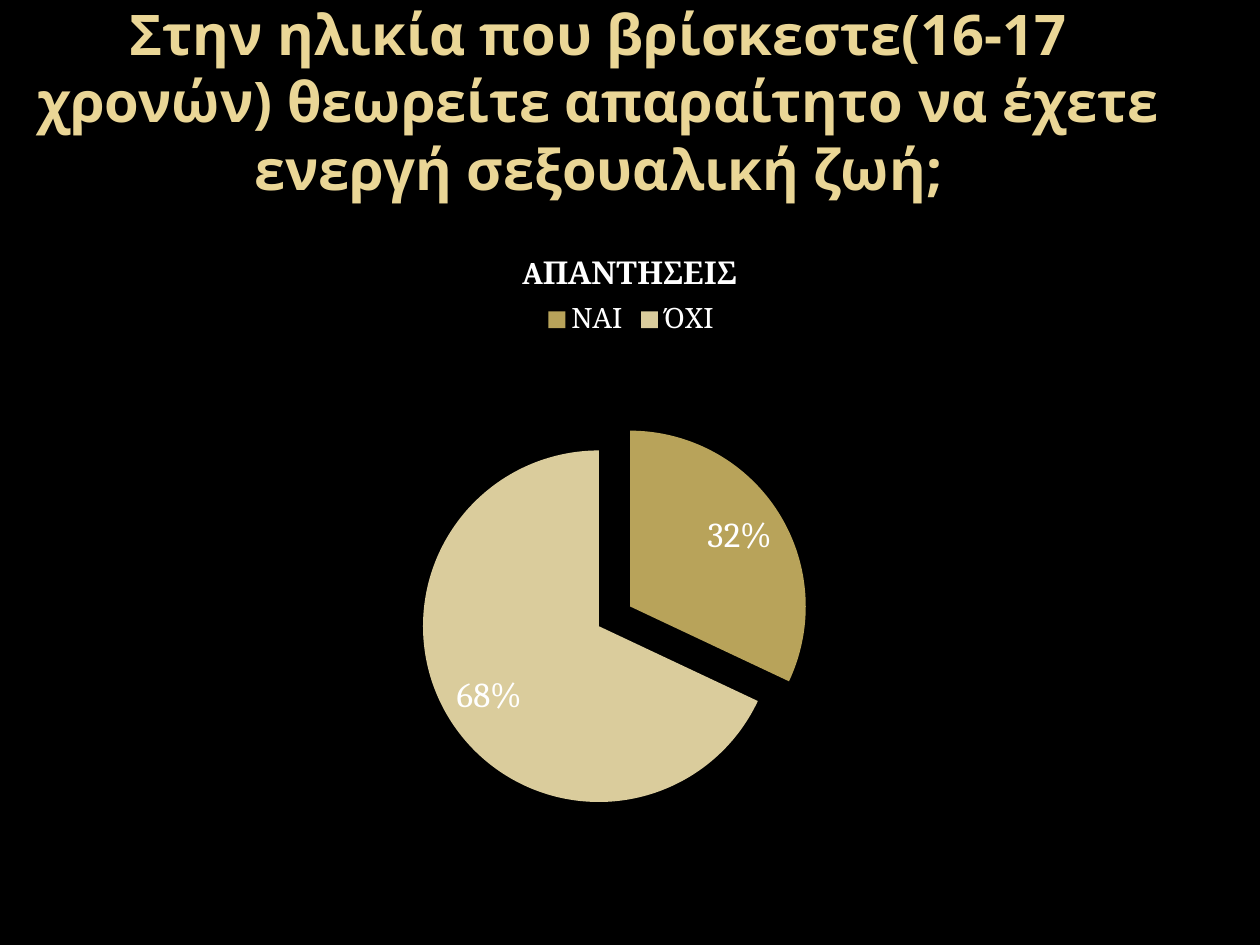
from lxml.etree import SubElement
from pptx import Presentation
from pptx.chart.data import CategoryChartData
from pptx.dml.color import RGBColor
from pptx.enum.chart import XL_CHART_TYPE as ChartType
from pptx.enum.chart import XL_LABEL_POSITION as LabelPosition
from pptx.enum.chart import XL_LEGEND_POSITION as LegendPosition
from pptx.enum.text import MSO_ANCHOR as Anchor, PP_ALIGN as Align
from pptx.oxml import parse_xml
from pptx.oxml.ns import nsdecls, qn
from pptx.util import Pt

BLACK = RGBColor(0x00, 0x00, 0x00)
WHITE = RGBColor(0xFF, 0xFF, 0xFF)
CREAM = RGBColor(0xEA, 0xD6, 0x96)
GOLD = RGBColor(0xB8, 0xA3, 0x5A)
SAND = RGBColor(0xDA, 0xCC, 0x9C)

QUESTION = ("Στην ηλικία που βρίσκεστε(16-17 χρονών) θεωρείτε απαραίτητο "
            "να έχετε ενεργή σεξουαλική ζωή;")
# Answer, share, colour, distance from the centre in percent
ANSWERS = [("ΝΑΙ", 32, GOLD, 0), ("ΌΧΙ", 68, SAND, 21)]


def style_font(font, size, color=WHITE, name="Cambria", bold=False):
    font.size, font.bold, font.name = Pt(size), bold, name
    font.color.rgb = color


def write_text(frame, text, align=Align.CENTER, **style):
    para = frame.paragraphs[0]
    para.alignment = align
    span = para.add_run()
    span.text = text
    style_font(span.font, **style)


def add_title(page, text):
    box = page.shapes.title
    box.left, box.top, box.width, box.height = Pt(0), Pt(21.6), Pt(684), Pt(108)
    frame = box.text_frame
    frame.word_wrap = True
    frame.vertical_anchor = Anchor.MIDDLE
    frame.margin_bottom = Pt(40)
    write_text(frame, text, size=32, color=CREAM, name="Noto Sans", bold=True)


def make_layout(**places):
    """Manual chart layout; places are fractions of the chart area."""
    layout = parse_xml(f"<c:layout {nsdecls('c')}/>")
    manual = SubElement(layout, qn("c:manualLayout"))
    if "w" in places:
        SubElement(manual, qn("c:layoutTarget")).set("val", "inner")
    for axis in "xy":
        SubElement(manual, qn(f"c:{axis}Mode")).set("val", "edge")
    for key, value in places.items():
        SubElement(manual, qn(f"c:{key}")).set("val", str(value))
    return layout


def place(element, after=None, **places):
    """Put a manual layout after the named child, or first."""
    for old in element.findall(qn("c:layout")):
        element.remove(old)
    layout = make_layout(**places)
    if after is None:
        element.insert(0, layout)
    else:
        element.find(qn(after)).addnext(layout)


def explosion(percent):
    return parse_xml(f'<c:explosion {nsdecls("c")} val="{percent}"/>')


def add_pie(page, title):
    data = CategoryChartData(number_format="General")
    data.categories = [answer[0] for answer in ANSWERS]
    data.add_series("Series 1", [answer[1] for answer in ANSWERS])
    chart = page.shapes.add_chart(ChartType.PIE, Pt(36), Pt(126), Pt(648),
                                  Pt(370.8), data).chart
    style_font(chart.font, 10)

    # Heading and legend
    chart.has_title = True
    write_text(chart.chart_title.text_frame, title, size=18, bold=True)
    chart.chart_title.include_in_layout = False
    place(chart.chart_title._element, "c:tx", x=0.4, y=0.04)
    chart.has_legend = True
    legend = chart.legend
    legend.position = LegendPosition.TOP
    legend.include_in_layout = False
    style_font(legend.font, 16)
    place(legend._element, "c:legendPos", x=0.42, y=0.12)

    # Slices
    plot = chart.plots[0]
    plot.vary_by_categories = True
    series = plot.series[0]
    for index, (_, _, color, distance) in enumerate(ANSWERS):
        point = series.points[index]
        fill = point.format.fill
        fill.solid()
        fill.fore_color.rgb = color
        point.format.line.fill.background()
        slices = series._element.findall(qn("c:dPt"))
        slices[index].find(qn("c:spPr")).addprevious(explosion(distance))
    series._element.find(qn("c:dPt")).addprevious(explosion(29))
    area = plot._element.getparent()
    place(area, x=0.3, y=0.24, w=0.4, h=0.71)

    # Percent labels
    plot.has_data_labels = True
    labels = plot.data_labels
    labels.show_value = False
    labels.show_percentage = True
    labels.number_format = "0%"
    labels.number_format_is_linked = False
    labels.position = LabelPosition.INSIDE_END
    style_font(labels.font, 20)


def main():
    deck = Presentation()
    deck.slide_width, deck.slide_height = Pt(720), Pt(540)
    page = deck.slides.add_slide(deck.slide_layouts[5])
    page.background.fill.solid()
    page.background.fill.fore_color.rgb = BLACK
    add_title(page, QUESTION)
    add_pie(page, "AΠΑΝΤΗΣΕΙΣ")
    deck.save("out.pptx")


if __name__ == "__main__":
    main()
